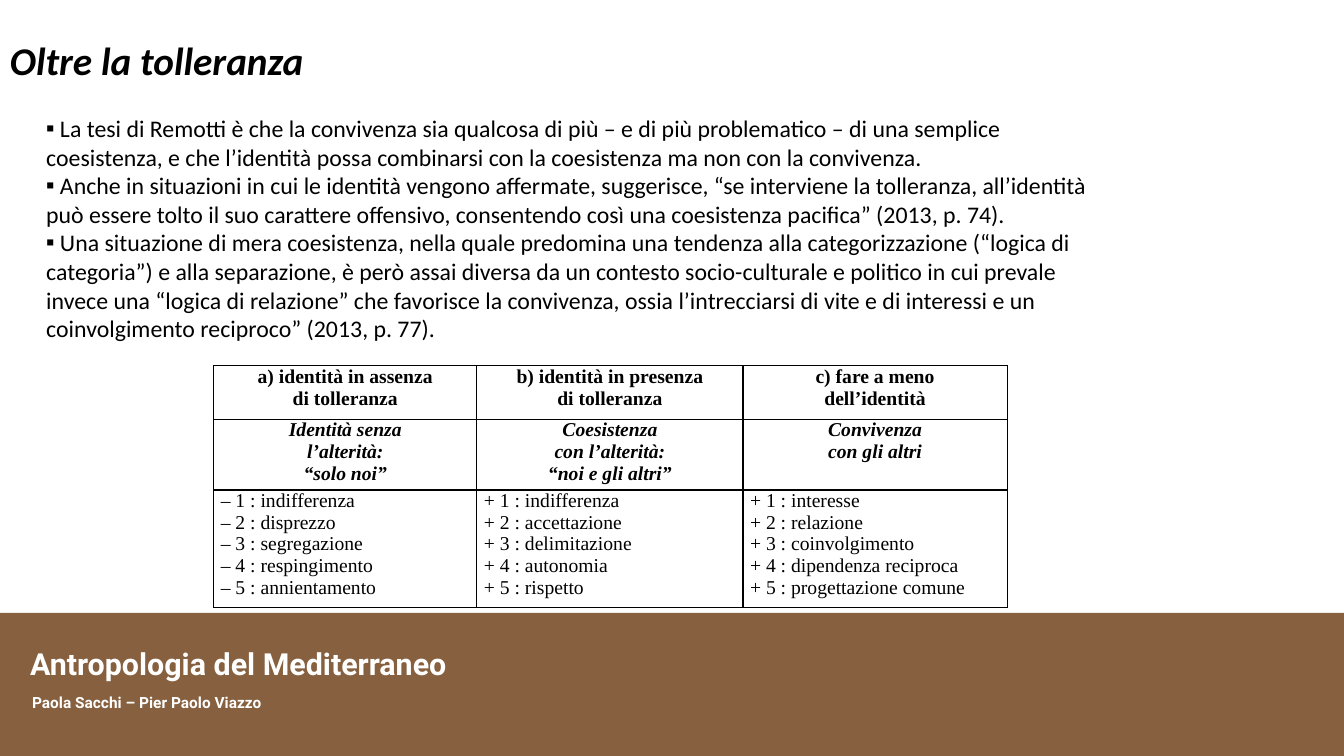
import pptx
import pptx.dml.color
import pptx.enum.shapes
import pptx.enum.text
import pptx.oxml
import pptx.oxml.ns
import pptx.util
from lxml import etree

INCH = pptx.util.Inches
ALIGN = pptx.enum.text.PP_ALIGN
WIDTH, HEIGHT = 13.33, 7.5

POINTS = [
    " La tesi di Remotti è che la convivenza sia qualcosa di più – e di più problematico – di una "
    "semplice coesistenza, e che l’identità possa combinarsi con la coesistenza ma non con la convivenza.",
    " Anche in situazioni in cui le identità vengono affermate, suggerisce, “se interviene la tolleranza, "
    "all’identità può essere tolto il suo carattere offensivo, consentendo così una coesistenza pacifica” "
    "(2013, p. 74).",
    " Una situazione di mera coesistenza, nella quale predomina una tendenza alla categorizzazione "
    "(“logica di categoria”) e alla separazione, è però assai diversa da un contesto socio-culturale e "
    "politico in cui prevale invece una “logica di relazione” che favorisce la convivenza, ossia "
    "l’intrecciarsi di vite e di interessi e un coinvolgimento reciproco” (2013, p. 77).",
]
HEADINGS = [
    ["a) identità in assenza", "di tolleranza"],
    ["b) identità in presenza", "di tolleranza"],
    ["c) fare a meno", "dell’identità"],
]
RELATIONS = [
    ["Identità senza", "l’alterità:", "“solo noi”"],
    ["Coesistenza", "con l’alterità:", "“noi e gli altri”"],
    ["Convivenza", "con gli altri"],
]
DEGREES = [
    ("–", ["indifferenza", "disprezzo", "segregazione", "respingimento", "annientamento"]),
    ("+", ["indifferenza", "accettazione", "delimitazione", "autonomia", "rispetto"]),
    ("+", ["interesse", "relazione", "coinvolgimento", "dipendenza reciproca", "progettazione comune"]),
]


def color(value):
    return pptx.dml.color.RGBColor.from_string(value)


def set_font(para, name, size, fill="000000", bold=False, italic=False):
    font = para.font
    font.name, font.size = name, pptx.util.Pt(size)
    font.bold, font.italic = bold, italic
    font.color.rgb = color(fill)


def add_bullet(para, mark, name):
    properties = para._p.get_or_add_pPr()
    etree.SubElement(properties, pptx.oxml.ns.qn("a:buFont")).set("typeface", name)
    etree.SubElement(properties, pptx.oxml.ns.qn("a:buChar")).set("char", mark)


def add_text(page, box, lines, bullet=None, spacing=None, **font):
    frame = page.shapes.add_textbox(*map(INCH, box)).text_frame
    frame.word_wrap = True
    frame.text = "\n".join(lines)
    for para in frame.paragraphs:
        if bullet:
            add_bullet(para, bullet, font["name"])
        if spacing:
            para.line_spacing = spacing
        set_font(para, **font)


def add_footer(page, box):
    left, top, width, height = box
    band = page.shapes.add_shape(pptx.enum.shapes.MSO_SHAPE.RECTANGLE, *map(INCH, box))
    band.shadow.inherit = False
    band.fill.solid()
    band.fill.fore_color.rgb = color("86603F")
    band.line.fill.background()
    add_text(page, (left + 0.2, top + 0.37, width - 0.43, 0.37), ["Antropologia del Mediterraneo"],
             spacing=0.7, name="Roboto", size=21.7, fill="FFFFFF", bold=True)
    add_text(page, (left + 0.22, top + 0.77, width - 0.43, 0.37), ["Paola Sacchi – Pier Paolo Viazzo"],
             spacing=0.9, name="Roboto", size=11, fill="FFFFFF", bold=True)


def add_borders(cell):
    properties = cell._tc.get_or_add_tcPr()
    for place, side in enumerate("LRTB"):
        properties.insert(place, pptx.oxml.parse_xml(
            f'<a:ln{side} {pptx.oxml.ns.nsdecls("a")} w="12700"><a:solidFill>'
            f'<a:srgbClr val="000000"/></a:solidFill></a:ln{side}>'))


def fill_cell(cell, lines, align, bold, italic):
    cell.fill.background()
    add_borders(cell)
    cell.margin_left = cell.margin_right = INCH(0.07)
    cell.margin_top = cell.margin_bottom = 0
    cell.text_frame.text = "\n".join(lines)
    for para in cell.text_frame.paragraphs:
        para.alignment = align
        set_font(para, "Times New Roman", 14, bold=bold, italic=italic)


def add_comparison(page, box):
    degrees = [[f"{sign} {step} : {word}" for step, word in enumerate(words, 1)]
               for sign, words in DEGREES]
    # Cell texts, row height, alignment, bold, italic
    rows = [
        (HEADINGS, 0.53, ALIGN.CENTER, True, False),
        (RELATIONS, 0.7, ALIGN.CENTER, True, True),
        (degrees, 1.16, ALIGN.LEFT, False, False),
    ]
    table = page.shapes.add_table(len(rows), 3, *map(INCH, box)).table
    table.first_row = table.horz_banding = False
    for column, width in zip(table.columns, (2.61, 2.64, 2.62)):
        column.width = INCH(width)
    for row, (texts, height, *style) in zip(table.rows, rows):
        row.height = INCH(height)
        for cell, lines in zip(row.cells, texts):
            fill_cell(cell, lines, *style)


def main():
    deck = pptx.Presentation()
    deck.slide_width, deck.slide_height = INCH(WIDTH), INCH(HEIGHT)
    page = deck.slides.add_slide(deck.slide_layouts[6])
    # Footer band
    add_footer(page, (0, 6.08, WIDTH, HEIGHT - 6.08))
    # Title and argument
    add_text(page, (0, 0.31, WIDTH, 0.6), ["Oltre la tolleranza"],
             name="Calibri", size=28, bold=True, italic=True)
    add_text(page, (0.36, 1.08, 10.65, 2.39), POINTS, bullet="▪", name="Calibri", size=17)
    # Comparison table
    add_comparison(page, (2.12, 3.63, 7.87, 2.39))
    deck.save("out.pptx")


if __name__ == "__main__":
    main()
